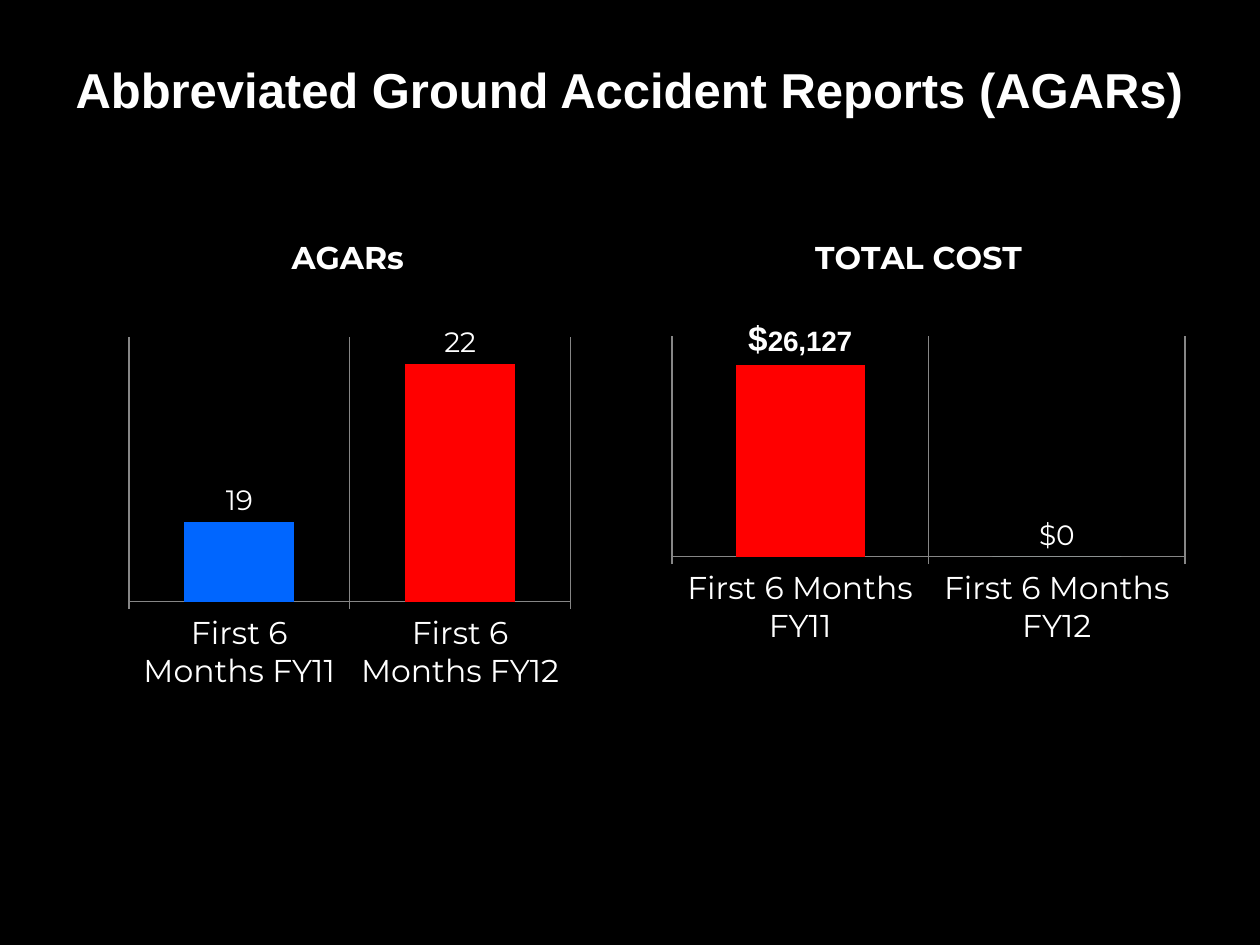
"""Build a slide comparing ground accident reports and their cost."""
from lxml import etree
from pptx import Presentation
from pptx.chart.data import CategoryChartData
from pptx.dml.color import RGBColor
from pptx.enum.chart import XL_CHART_TYPE, XL_LABEL_POSITION, XL_TICK_MARK
from pptx.enum.text import MSO_ANCHOR, MSO_AUTO_SIZE, PP_ALIGN
from pptx.oxml.ns import qn
from pptx.util import Cm, Pt

COLUMNS = XL_CHART_TYPE.COLUMN_CLUSTERED
OUTSIDE = XL_LABEL_POSITION.OUTSIDE_END
CROSS, NO_TICK = XL_TICK_MARK.CROSS, XL_TICK_MARK.NONE
LEFT, MIDDLE = PP_ALIGN.LEFT, MSO_ANCHOR.MIDDLE
NO_FIT = MSO_AUTO_SIZE.NONE
WHITE, GREY, RED, BLUE, PALE = "FFFFFF", "868686", "FF0000", "0066FF", "BBE0E3"

HEADING = "Abbreviated Ground Accident Reports (AGARs)"
PERIODS = ["First 6 Months FY11", "First 6 Months FY12"]
CHARTS = [
    dict(title="AGARs", values=[19, 22], fills=[BLUE, RED], scale=(17.5, 22.5),
         gap=101, number_format="General", left=1.7, width=10.69,
         title_at=(0.38, 0.04), plot=(0.084, 0.263, 0.833, 0.548), spans=[]),
    dict(title="TOTAL COST", values=[26127, 0], fills=[RED, PALE], scale=(0, 30000),
         gap=99, number_format='"$"#,##0', left=12.7, width=12.06,
         title_at=(0.3, 0.04), plot=(0.07, 0.261, 0.858, 0.457),
         spans=[("$", 20), ("26,127", 16)]),
]
CHART_TOP, CHART_HEIGHT = 4.24, 9.73


def color(hex_code):
    return RGBColor.from_string(hex_code)


def style(font, size, name="Montserrat", bold=False):
    font.size, font.name, font.bold = Pt(size), name, bold
    font.color.rgb = color(WHITE)


def add_text(frame, text, **style_options):
    span = frame.paragraphs[0].add_run()
    span.text = text
    style(span.font, **style_options)


def draw_line(line):
    line.color.rgb = color(GREY)
    line.width = Pt(0.75)


def set_layout(element, position, fractions, target=None):
    for old in element.findall(qn("c:layout")):
        element.remove(old)
    layout = etree.Element(qn("c:layout"))
    element.insert(position, layout)
    manual = etree.SubElement(layout, qn("c:manualLayout"))
    settings = [("layoutTarget", target)] if target else []
    settings += [("xMode", "edge"), ("yMode", "edge"), *zip("xywh", fractions)]
    for tag, value in settings:
        etree.SubElement(manual, qn(f"c:{tag}")).set("val", str(value))


def add_column_chart(slide, content):
    data = CategoryChartData(number_format=content["number_format"])
    data.categories = PERIODS
    data.add_series("Series 1", content["values"])
    chart = slide.shapes.add_chart(
        COLUMNS, Cm(content["left"]), Cm(CHART_TOP),
        Cm(content["width"]), Cm(CHART_HEIGHT), data).chart
    style(chart.font, 10, "Arial")
    chart.has_legend = False

    title = chart.chart_title
    add_text(title.text_frame, content["title"], size=18, bold=True)
    set_layout(title.element, 1, content["title_at"])
    set_layout(chart.element.find(f".//{qn('c:plotArea')}"), 0, content["plot"], "inner")

    periods, amounts = chart.category_axis, chart.value_axis
    periods.major_tick_mark, periods.minor_tick_mark = CROSS, NO_TICK
    periods.has_major_gridlines = True
    draw_line(periods.major_gridlines.format.line)
    draw_line(periods.format.line)
    style(periods.tick_labels.font, 18)
    amounts.has_major_gridlines = False
    amounts.visible = False
    amounts.minimum_scale, amounts.maximum_scale = content["scale"]

    plot = chart.plots[0]
    plot.gap_width = content["gap"]
    plot.vary_by_categories = False
    series = plot.series[0]
    for index, fill_color in enumerate(content["fills"]):
        fill = series.points[index].format.fill
        fill.solid()
        fill.fore_color.rgb = color(fill_color)
    labels = series.data_labels
    labels.show_value = True
    labels.position = OUTSIDE
    labels.number_format = content["number_format"]
    labels.number_format_is_linked = False
    style(labels.font, 16)
    if content["spans"]:
        label = series.points[0].data_label
        for text, size in content["spans"]:
            add_text(label.text_frame, text, size=size, name="Arial", bold=True)
        label.position = OUTSIDE


def main():
    deck = Presentation()
    deck.slide_width, deck.slide_height = Cm(25.4), Cm(19.05)
    slide = deck.slides.add_slide(deck.slide_layouts[5])
    slide.background.fill.solid()
    slide.background.fill.fore_color.rgb = color("000000")

    box = slide.shapes.title
    box.left, box.top, box.width, box.height = Cm(1.27), Cm(1.07), Cm(23.11), Cm(1.45)
    frame = box.text_frame
    frame.word_wrap, frame.auto_size = False, NO_FIT
    frame.vertical_anchor = MIDDLE
    frame.paragraphs[0].alignment = LEFT
    add_text(frame, HEADING, size=28, name="Arial", bold=True)

    for content in CHARTS:
        add_column_chart(slide, content)
    deck.save("out.pptx")


if __name__ == "__main__":
    main()
